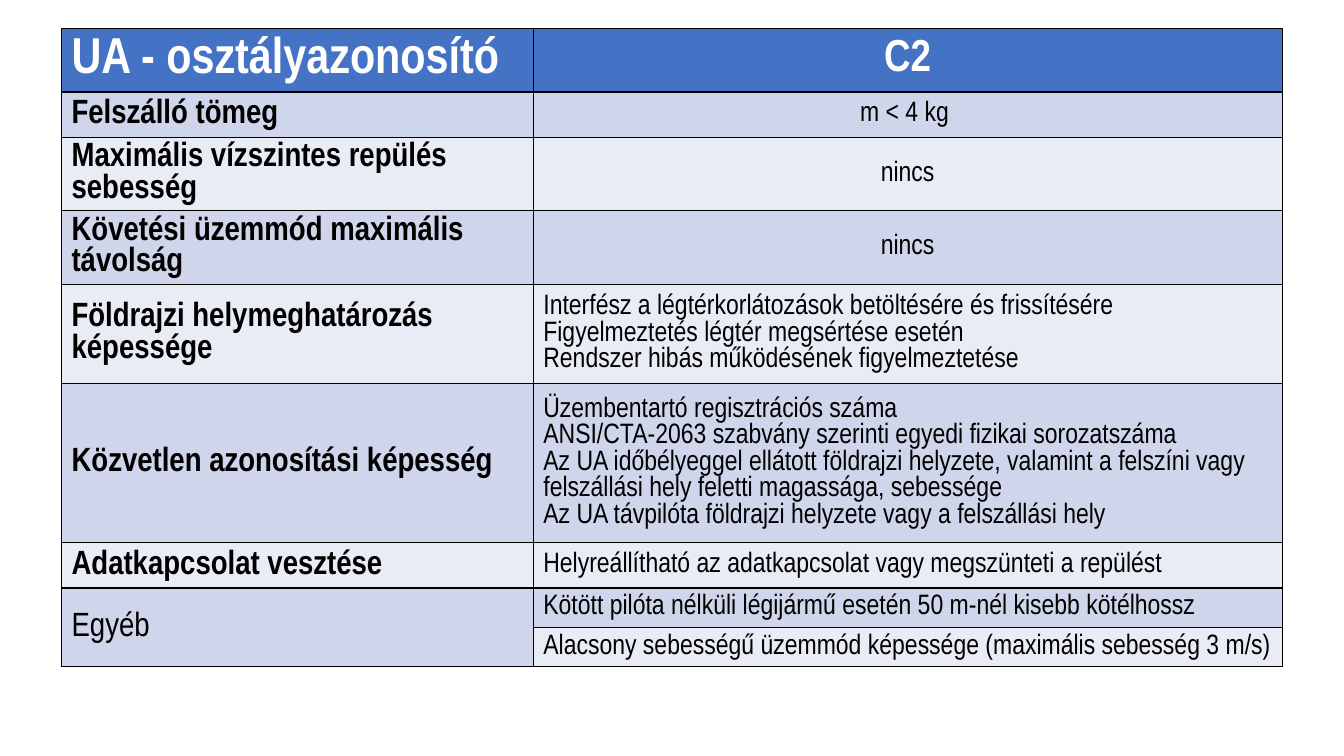
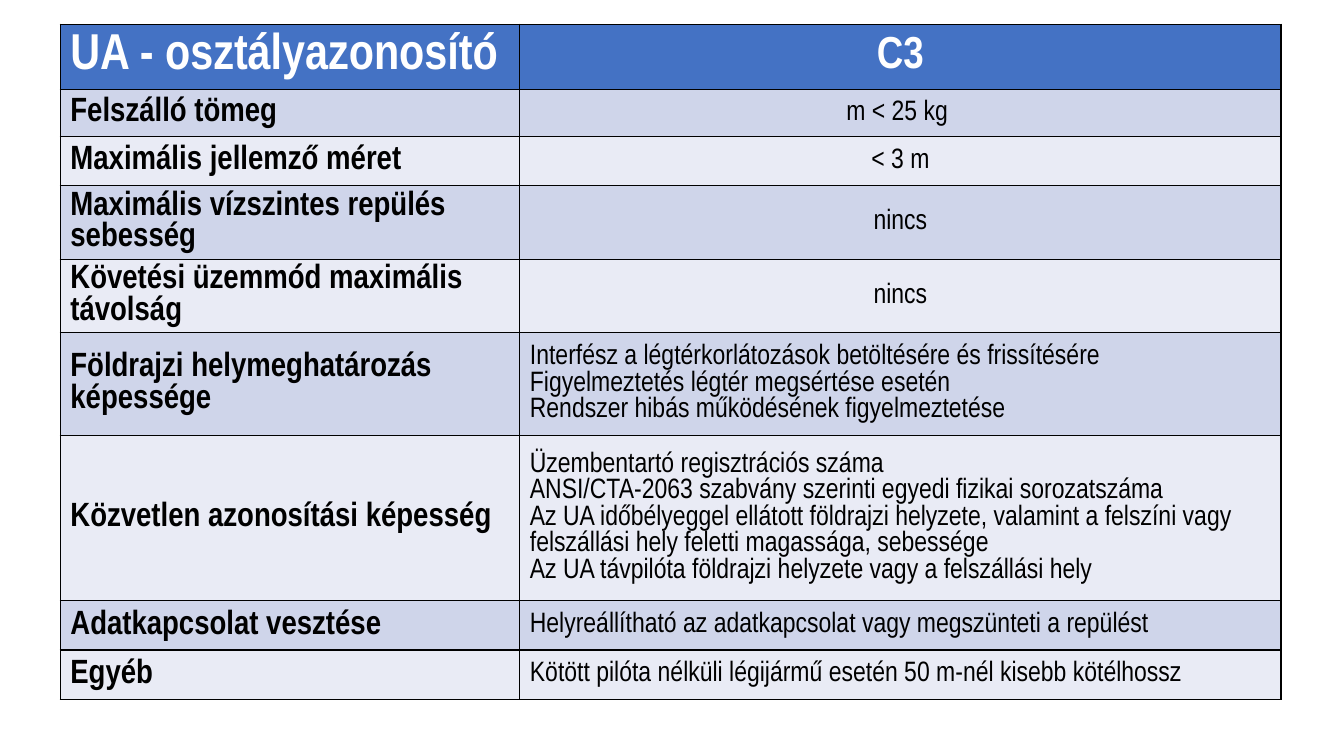
import pptx
import pptx.dml.color
import pptx.enum.text
import pptx.oxml
import pptx.oxml.ns
import pptx.util

Cm = pptx.util.Cm
Pt = pptx.util.Pt
ALIGN = pptx.enum.text.PP_ALIGN

# Shared style
FONT = "Arial Narrow"
HEADER_FILL = "4472C4"
BAND_FILLS = ("E9EBF5", "CFD5EA")
HEADER_TEXT = "FFFFFF"
BODY_TEXT = "000000"
BORDER = "000000"

# Wording common to both classes
HEADER_LABEL = "UA - osztályazonosító"
MASS = "Felszálló tömeg"
SIZE = "Maximális jellemző méret"
SPEED = "Maximális vízszintes repülés sebesség"
FOLLOW = "Követési üzemmód maximális távolság"
GEO = "Földrajzi helymeghatározás képessége"
REMOTE_ID = "Közvetlen azonosítási képesség"
LINK_LOSS = "Adatkapcsolat vesztése"
OTHER = "Egyéb"
NONE = ["nincs"]
GEO_LINES = [
    "Interfész a légtérkorlátozások betöltésére és frissítésére",
    "Figyelmeztetés légtér megsértése esetén",
    "Rendszer hibás működésének figyelmeztetése",
]
REMOTE_ID_LINES = [
    "Üzembentartó regisztrációs száma",
    "ANSI/CTA-2063 szabvány szerinti egyedi fizikai sorozatszáma",
    "Az UA időbélyeggel ellátott földrajzi helyzete, valamint a felszíni vagy "
    "felszállási hely feletti magassága, sebessége",
    "Az UA távpilóta földrajzi helyzete vagy a felszállási hely",
]
LINK_LOSS_LINES = ["Helyreállítható az adatkapcsolat vagy megszünteti a repülést"]
TETHER_LINES = ["Kötött pilóta nélküli légijármű esetén 50 m-nél kisebb kötélhossz"]
SLOW_MODE_LINES = ["Alacsony sebességű üzemmód képessége (maximális sebesség 3 m/s)"]

CENTRED_LABELS = {MASS, SIZE, SPEED, FOLLOW}

# One entry per slide; a row is (label, value lines, height in cm),
# and a label of None continues the row above
CLASSES = [
    {
        "name": "C2", "left": 1.55, "top": 0.72, "columns": (11.89, 18.87),
        "header_height": 1.6, "other_bold": False,
        "rows": [
            (MASS, ["m < 4 kg "], 1.14),
            (SPEED, NONE, 1.85),
            (FOLLOW, NONE, 1.85),
            (GEO, GEO_LINES, 2.5),
            (REMOTE_ID, REMOTE_ID_LINES, 4.02),
            (LINK_LOSS, LINK_LOSS_LINES, 1.14),
            (OTHER, TETHER_LINES, 0.99),
            (None, SLOW_MODE_LINES, 0.99),
        ],
    },
    {
        "name": "C3", "left": 1.52, "top": 0.61, "columns": (11.58, 19.18),
        "header_height": 1.65, "other_bold": True,
        "rows": [
            (MASS, ["m < 25 kg "], 1.18),
            (SIZE, ["< 3 m"], 1.24),
            (SPEED, NONE, 1.85),
            (FOLLOW, NONE, 1.85),
            (GEO, GEO_LINES, 2.59),
            (REMOTE_ID, REMOTE_ID_LINES, 4.17),
            (LINK_LOSS, LINK_LOSS_LINES, 1.24),
            (OTHER, TETHER_LINES, 1.24),
        ],
    },
]


def colour(value):
    return pptx.dml.color.RGBColor.from_string(value)


def add_borders(cell):
    properties = cell._tc.get_or_add_tcPr()
    for side in ("lnL", "lnR", "lnT", "lnB"):
        properties.append(pptx.oxml.parse_xml(
            f'<a:{side} {pptx.oxml.ns.nsdecls("a")} w="{Pt(1)}"><a:solidFill>'
            f'<a:srgbClr val="{BORDER}"/></a:solidFill></a:{side}>'))


def style_cell(cell, fill):
    add_borders(cell)
    cell.fill.solid()
    cell.fill.fore_color.rgb = colour(fill)
    cell.vertical_anchor = pptx.enum.text.MSO_ANCHOR.MIDDLE


def write_cell(cell, lines, size, text_colour=BODY_TEXT, bold=False, centred=False):
    frame = cell.text_frame
    frame.text = "\n".join(lines)
    for para in frame.paragraphs:
        para.alignment = ALIGN.CENTER if centred else ALIGN.LEFT
        para.font.name = FONT
        para.font.size = Pt(size)
        para.font.bold = bold
        para.font.color.rgb = colour(text_colour)


def add_class_table(page, drone_class):
    rows = drone_class["rows"]
    columns = drone_class["columns"]
    heights = [drone_class["header_height"]] + [height for _, _, height in rows]
    table = page.shapes.add_table(
        len(heights), len(columns), Cm(drone_class["left"]), Cm(drone_class["top"]),
        Cm(sum(columns)), Cm(sum(heights))).table
    table.horz_banding = False
    for column, width in zip(table.columns, columns):
        column.width = Cm(width)

    # Fills and borders, row by row
    for index, height in enumerate(heights):
        table.rows[index].height = Cm(height)
        fill = BAND_FILLS[index % 2] if index else HEADER_FILL
        for cell in table.rows[index].cells:
            style_cell(cell, fill)

    # Header
    write_cell(table.cell(0, 0), [HEADER_LABEL], 36, HEADER_TEXT, bold=True)
    write_cell(table.cell(0, 1), [drone_class["name"]], 32, HEADER_TEXT,
               bold=True, centred=True)

    # Labels and values
    for index, (label, lines, _) in enumerate(rows, start=1):
        if label is None:
            table.cell(index - 1, 0).merge(table.cell(index, 0))
        else:
            bold = label != OTHER or drone_class["other_bold"]
            write_cell(table.cell(index, 0), [label], 24, bold=bold)
        write_cell(table.cell(index, 1), lines, 20, centred=label in CENTRED_LABELS)


def main():
    deck = pptx.Presentation()
    deck.slide_width = Cm(33.87)
    deck.slide_height = Cm(19.05)
    blank_layout = deck.slide_layouts[6]
    for drone_class in CLASSES:
        add_class_table(deck.slides.add_slide(blank_layout), drone_class)
    deck.save("out.pptx")


if __name__ == "__main__":
    main()
